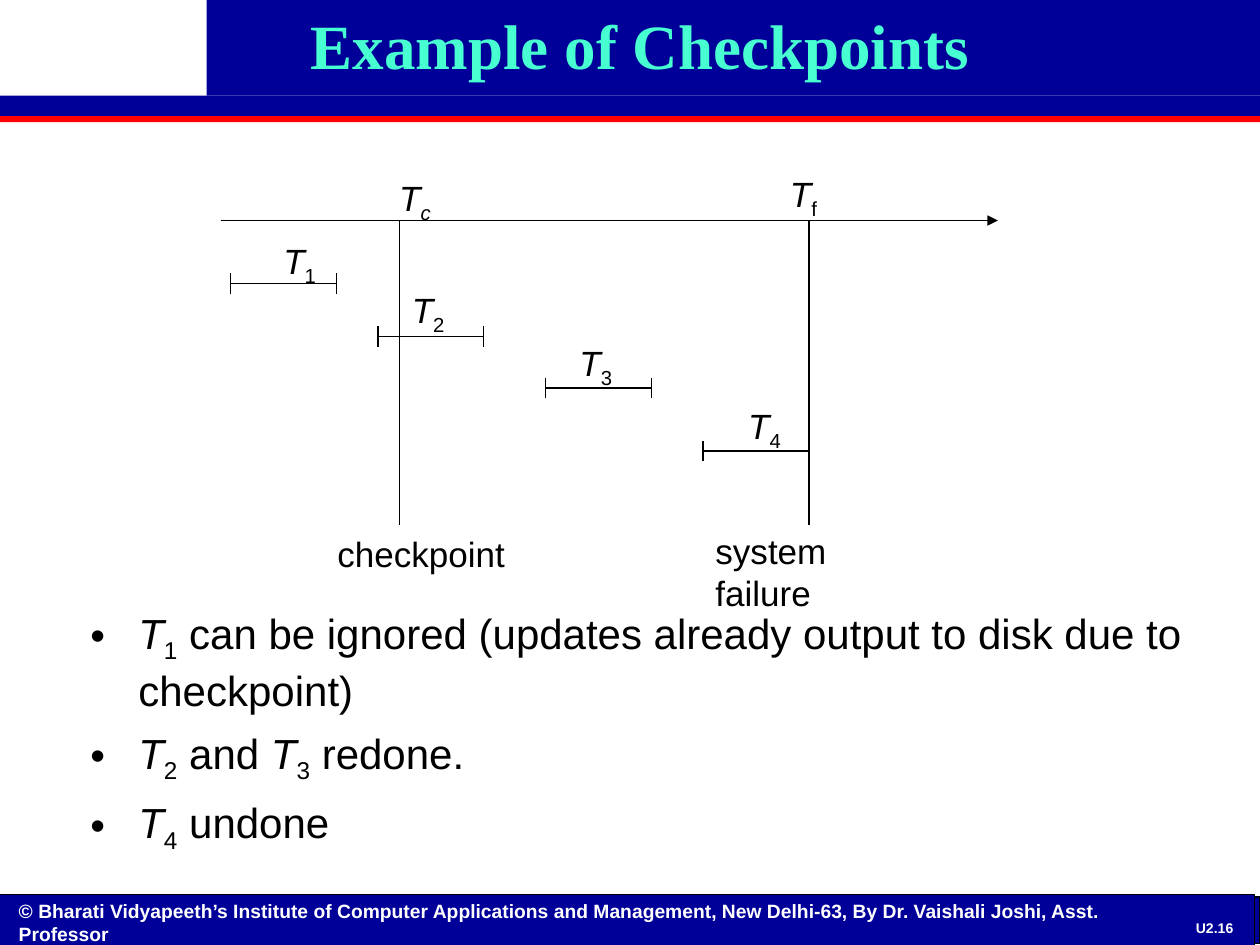
from lxml import etree
from pptx import Presentation
from pptx.dml.color import RGBColor
from pptx.enum.shapes import MSO_CONNECTOR, MSO_SHAPE
from pptx.enum.text import MSO_ANCHOR, PP_ALIGN
from pptx.oxml.ns import qn
from pptx.util import Inches, Pt

RECTANGLE = MSO_SHAPE.RECTANGLE
STRAIGHT = MSO_CONNECTOR.STRAIGHT
LEFT, CENTER = PP_ALIGN.LEFT, PP_ALIGN.CENTER
TOP, MIDDLE, BOTTOM = MSO_ANCHOR.TOP, MSO_ANCHOR.MIDDLE, MSO_ANCHOR.BOTTOM

NAVY, RED, AQUA, BLACK, WHITE = "000099", "FF0000", "47FFD1", "000000", "FFFFFF"

# Runs are (text, style): "i" italic, "s" subscript, "is" both.
TITLE = "Example of Checkpoints"
BULLETS = [
    [("T", "i"), ("1", "s"),
     (" can be ignored (updates already output to disk due to checkpoint)", "")],
    [("T", "i"), ("2", "s"), (" and ", ""), ("T", "i"), ("3", "s"), (" redone.", "")],
    [("T", "i"), ("4", "s"), (" undone", "")],
]
FOOTER = ("© Bharati Vidyapeeth’s Institute of Computer Applications and Management, "
          "New Delhi-63, By Dr. Vaishali Joshi, Asst. Professor")
PAGE_NUMBER = "U2.16"

# left, top, width, height, fill, outlined
BARS = [
    (0, 7.12, 10, 0.37, NAVY, True),
    (0, 0.92, 10, 0.05, RED, False),
    (1.64, 0, 8.36, 0.76, NAVY, False),
    (0, 0.76, 10, 0.16, NAVY, False),
    (-0.04, 7.1, 10, 0.43, NAVY, True),
]

AXIS_START, AXIS_END, AXIS_Y = 1.75, 7.92, 1.75
EVENT_BOTTOM = 4.17
# x, subscript, its style, symbol box, caption, caption box
EVENTS = [
    (3.17, "c", "is", (3.07, 1.35, 0.46), "checkpoint", (2.58, 4.18, 1.53)),
    (6.42, "f", "s", (6.17, 1.32, 0.42), "system failure", (5.58, 4.15, 1.91)),
]
SPAN_LENGTH, CAP_HALF, LABEL_HEIGHT = 0.84, 0.08, 0.43
# start x, y, subscript, label left, label top
TRANSACTIONS = [
    (1.83, 2.25, "1", 2.15, 1.85),
    (3.0, 2.67, "2", 3.17, 2.24),
    (4.33, 3.08, "3", 4.5, 2.66),
    (5.58, 3.58, "4", 5.84, 3.16),
]


def color(value):
    return RGBColor.from_string(value)


def add_bar(slide, left, top, width, height, fill, outlined):
    shape = slide.shapes.add_shape(
        RECTANGLE, Inches(left), Inches(top), Inches(width), Inches(height))
    shape.shadow.inherit = False
    shape.fill.solid()
    shape.fill.fore_color.rgb = color(fill)
    if outlined:
        shape.line.color.rgb = color(BLACK)
        shape.line.width = Pt(0.75)
    else:
        shape.line.fill.background()


def add_line(slide, x1, y1, x2, y2, arrow=False):
    line = slide.shapes.add_connector(
        STRAIGHT, Inches(x1), Inches(y1), Inches(x2), Inches(y2))
    line.line.color.rgb = color(BLACK)
    line.line.width = Pt(0.75)
    if arrow:
        outline = line.line._get_or_add_ln()
        etree.SubElement(outline, qn("a:tailEnd"), type="triangle")
    etree.SubElement(line._element.spPr, qn("a:effectLst"))


def add_bullet(paragraph):
    properties = paragraph._p.get_or_add_pPr()
    properties.set("marL", str(Inches(0.38)))
    properties.set("indent", str(Inches(-0.38)))
    bullet_color = etree.SubElement(properties, qn("a:buClr"))
    etree.SubElement(bullet_color, qn("a:srgbClr"), val=BLACK)
    etree.SubElement(properties, qn("a:buFont"), typeface="Arial")
    etree.SubElement(properties, qn("a:buChar"), char="•")


def add_text(slide, left, top, width, height, paragraphs, size=20, font="Arial",
             fill=BLACK, bold=False, align=LEFT, anchor=TOP, wrap=True,
             bullets=False, space=0, inset=0.05):
    """Add a text box; paragraphs is a string or a list of lists of runs."""
    if isinstance(paragraphs, str):
        paragraphs = [[(paragraphs, "")]]
    box = slide.shapes.add_textbox(
        Inches(left), Inches(top), Inches(width), Inches(height))
    frame = box.text_frame
    frame.word_wrap = wrap
    frame.vertical_anchor = anchor
    frame.margin_top = frame.margin_bottom = Inches(inset)
    for index, runs in enumerate(paragraphs):
        paragraph = frame.add_paragraph() if index else frame.paragraphs[0]
        if bullets:
            add_bullet(paragraph)
        paragraph.alignment = align
        if index:
            paragraph.space_before = Pt(space)
        for text, style in runs:
            run = paragraph.add_run()
            run.text = text
            run.font.name = font
            run.font.size = Pt(size)
            run.font.bold = bold
            run.font.italic = "i" in style
            run.font.color.rgb = color(fill)
            if "s" in style:
                run._r.get_or_add_rPr().set("baseline", "-25000")


def add_timeline(slide):
    add_line(slide, AXIS_START, AXIS_Y, AXIS_END, AXIS_Y, arrow=True)
    for x, subscript, style, symbol_box, caption, caption_box in EVENTS:
        add_line(slide, x, AXIS_Y, x, EVENT_BOTTOM)
        add_text(slide, *symbol_box, LABEL_HEIGHT,
                 [[("T", "i"), (subscript, style)]], wrap=False)
        add_text(slide, *caption_box, LABEL_HEIGHT, caption, wrap=False)
    for start, y, subscript, label_left, label_top in TRANSACTIONS:
        end = start + SPAN_LENGTH
        add_line(slide, start, y, end, y)
        for x in (start, end):
            add_line(slide, x, y - CAP_HALF, x, y + CAP_HALF)
        add_text(slide, label_left, label_top, 0.47, LABEL_HEIGHT,
                 [[("T", "i"), (subscript, "s")]], wrap=False)


def main():
    presentation = Presentation()
    presentation.slide_width, presentation.slide_height = Inches(10), Inches(7.5)
    slide = presentation.slides.add_slide(presentation.slide_layouts[6])
    for bar in BARS:
        add_bar(slide, *bar)
    add_text(slide, 0.05, 7.09, 9.48, 0.49, FOOTER, size=11, fill=WHITE, bold=True)
    add_text(slide, 9.38, 7.27, 0.52, 0.19, PAGE_NUMBER, size=8, fill=WHITE,
             bold=True, align=CENTER, anchor=MIDDLE, inset=0)
    add_text(slide, 0.58, 0, 9, 1.25, TITLE, size=36, font="Times New Roman",
             fill=AQUA, bold=True, align=CENTER)
    add_text(slide, 0.62, 1.36, 9.04, 5.47, BULLETS, size=24, anchor=BOTTOM,
             bullets=True, space=7)
    add_timeline(slide)
    presentation.save("out.pptx")


if __name__ == "__main__":
    main()
